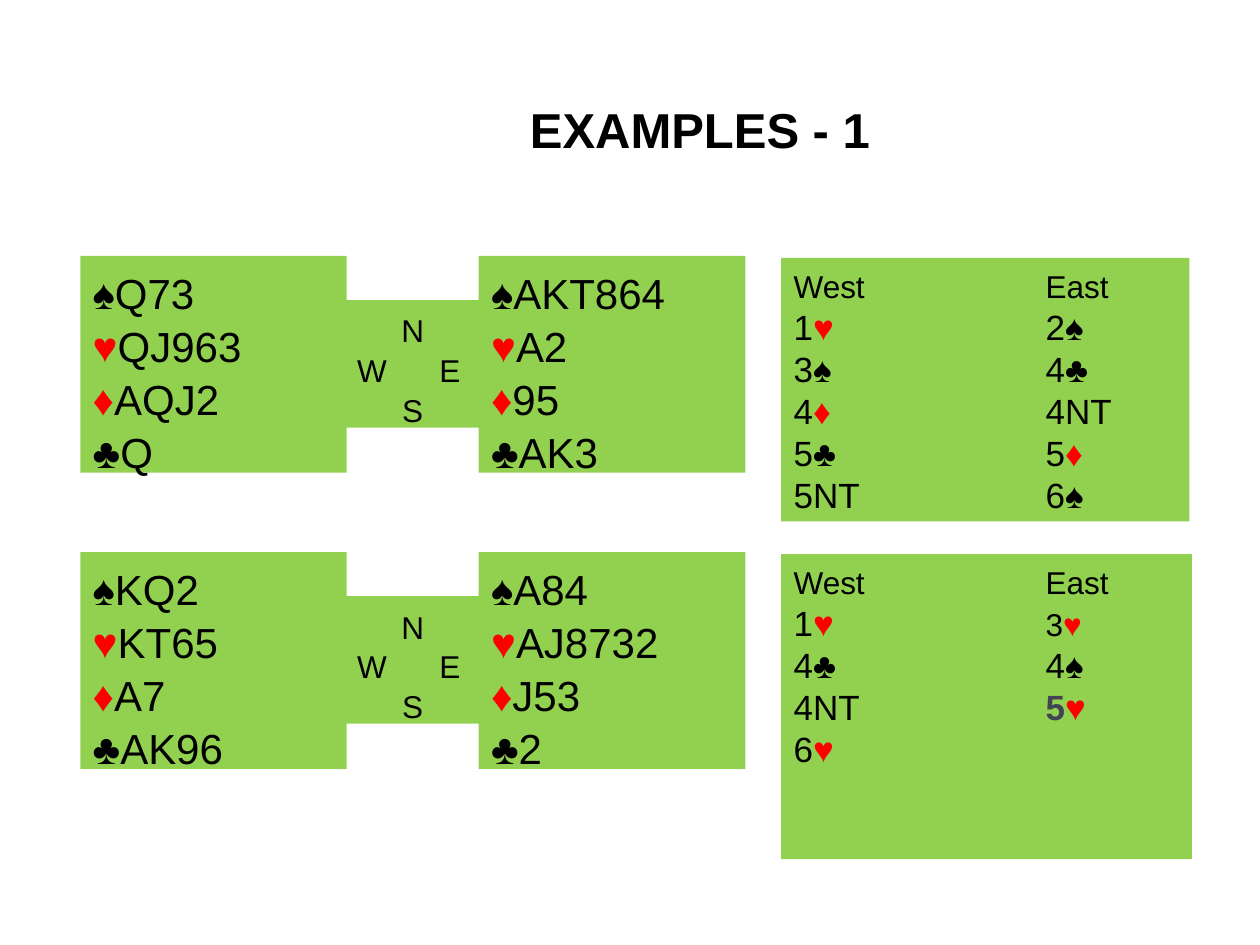
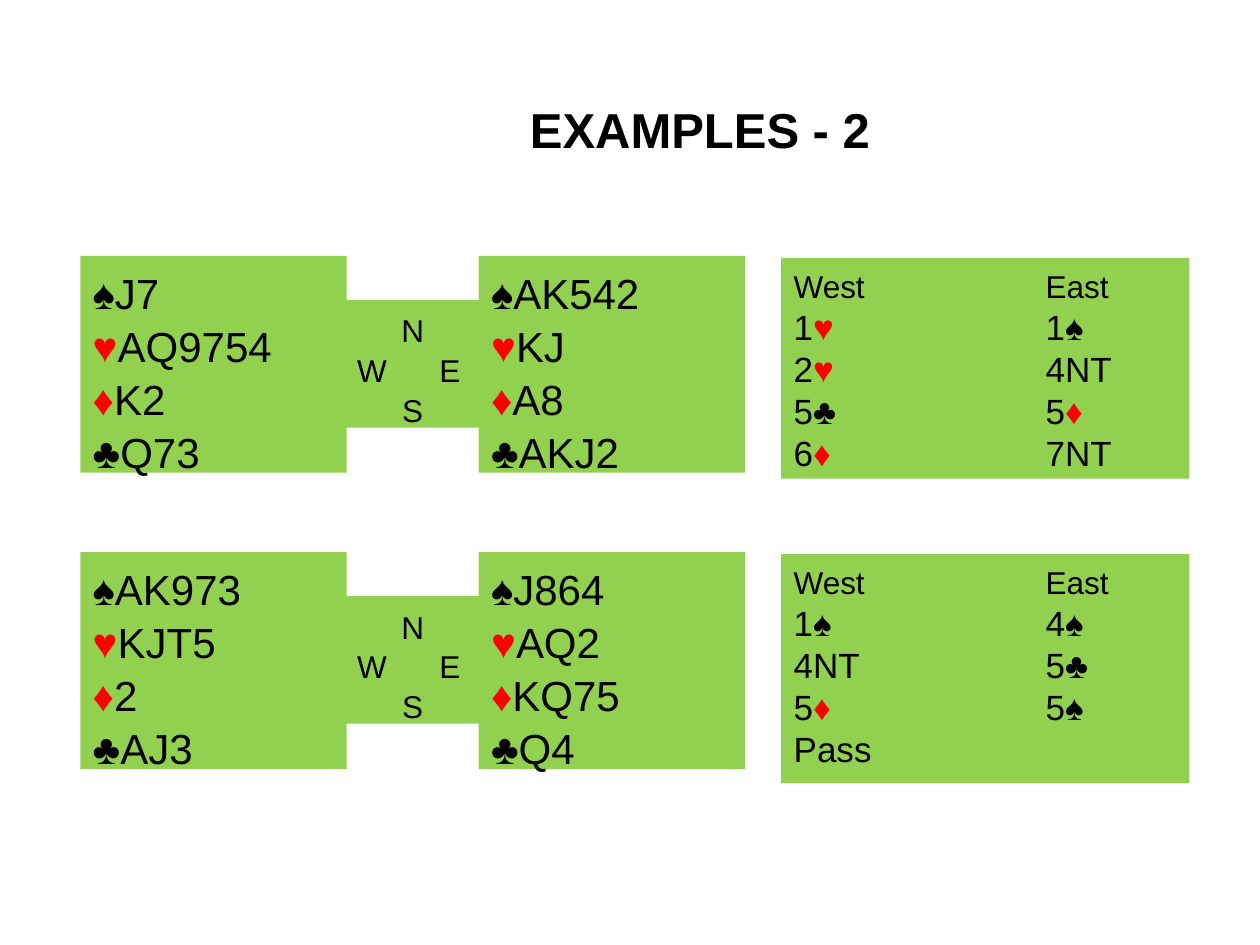
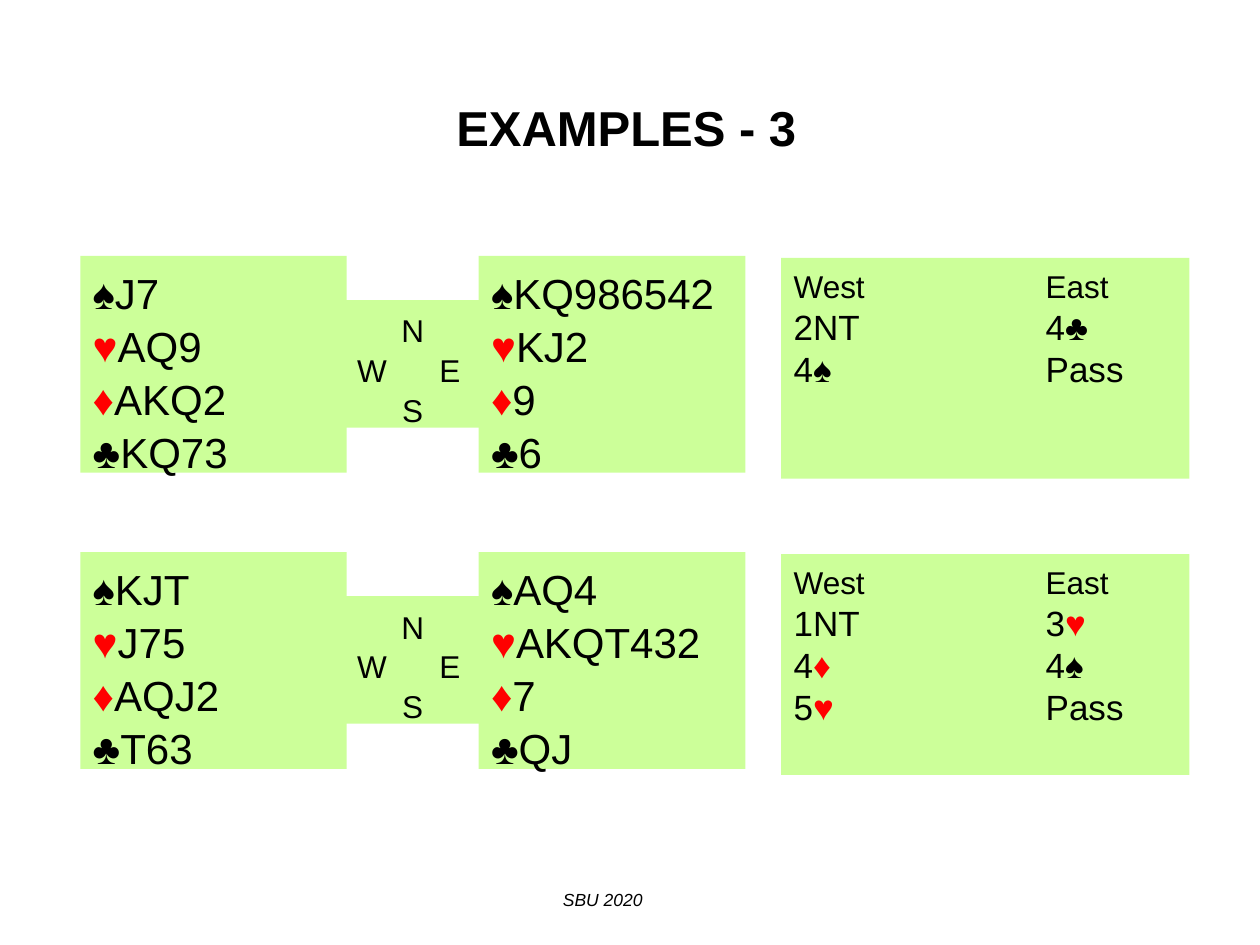
"""Build three slides of bridge hands with their auctions."""
from dataclasses import dataclass
from itertools import groupby, zip_longest

from lxml.etree import SubElement
from pptx import Presentation
from pptx.dml.color import RGBColor
from pptx.enum.shapes import MSO_SHAPE
from pptx.enum.text import MSO_ANCHOR, PP_ALIGN
from pptx.oxml.ns import qn
from pptx.util import Cm, Pt

BLACK = RGBColor(0x00, 0x00, 0x00)
RED = RGBColor(0xFF, 0x00, 0x00)
SLATE = RGBColor(0x42, 0x44, 0x56)
GREEN = RGBColor(0x92, 0xD0, 0x50)
PALE_GREEN = RGBColor(0xCC, 0xFF, 0x99)
FONT = "Arial"
SUITS = "♠♥♦♣"
RED_SUITS = "♥♦"
DEAL_TOPS = (5.16, 11.13)
EAST_BID_TAB = Cm(5.08)
EAST_SEAT_TAB = Cm(1.66)


@dataclass(frozen=True)
class Box:
    """Place and size in centimetres."""
    left: float
    top: float
    width: float
    height: float

    def lengths(self) -> tuple:
        """Return the four values as lengths."""
        return Cm(self.left), Cm(self.top), Cm(self.width), Cm(self.height)


@dataclass(frozen=True)
class Deal:
    """Two hands, in suit order, and the bids made with them."""
    west_hand: str
    east_hand: str
    west_bids: str
    east_bids: str
    auction_height: float = 4.45
    auction_width: float = 8.23
    small_bid: str = ""
    stressed_bid: str = ""


@dataclass(frozen=True)
class Example:
    """One slide with two deals."""
    title: str
    deals: tuple[Deal, Deal]
    felt: RGBColor = GREEN
    title_box: Box = Box(3.38, 1.14, 21.46, 2.9)
    credit: str = ""


EXAMPLES = (
    Example("EXAMPLES - 1", (
        Deal("Q73 QJ963 AQJ2 Q", "AKT864 A2 95 AK3",
             "1♥ 3♠ 4♦ 5♣ 5NT", "2♠ 4♣ 4NT 5♦ 6♠", 5.31),
        Deal("KQ2 KT65 A7 AK96", "A84 AJ8732 J53 2",
             "1♥ 4♣ 4NT 6♥", "3♥ 4♠ 5♥", 6.15, 8.28, "3♥", "5♥"),
    )),
    Example("EXAMPLES - 2", (
        Deal("J7 AQ9754 K2 Q73", "AK542 KJ A8 AKJ2",
             "1♥ 2♥ 5♣ 6♦", "1♠ 4NT 5♦ 7NT"),
        Deal("AK973 KJT5 2 AJ3", "J864 AQ2 KQ75 Q4",
             "1♠ 4NT 5♦ Pass", "4♠ 5♣ 5♠", 4.62),
    )),
    Example("EXAMPLES - 3", (
        Deal("J7 AQ9 AKQ2 KQ73", "KQ986542 KJ2 9 6",
             "2NT 4♠", "4♣ Pass"),
        Deal("KJT J75 AQJ2 T63", "AQ4 AKQT432 7 QJ",
             "1NT 4♦ 5♥", "3♥ 4♠ Pass"),
    ), PALE_GREEN, Box(3.38, 1.09, 18.49, 2.92), "SBU 2020"),
)


def add_runs(paragraph, text: str, size: float, ink: RGBColor = BLACK,
             bold: bool = False) -> None:
    """Append text, with hearts and diamonds in red."""
    for is_red, letters in groupby(text, lambda letter: letter in RED_SUITS):
        run = paragraph.add_run()
        run.text = "".join(letters)
        run.font.name = FONT
        run.font.size = Pt(size)
        run.font.color.rgb = RED if is_red else ink
        run.font.bold = bold and not is_red


def add_tab_stop(paragraph, position: int) -> None:
    """Give a paragraph one left tab stop."""
    tabs = SubElement(paragraph._p.get_or_add_pPr(), qn("a:tabLst"))
    SubElement(tabs, qn("a:tab"), pos=str(int(position)), algn="l")


def add_felt(shapes, box: Box, felt: RGBColor):
    """Draw a flat green rectangle and return its text frame."""
    panel = shapes.add_shape(MSO_SHAPE.RECTANGLE, *box.lengths())
    panel.shadow.inherit = False
    panel.fill.solid()
    panel.fill.fore_color.rgb = felt
    panel.line.fill.background()
    frame = panel.text_frame
    frame.word_wrap = True
    frame.vertical_anchor = MSO_ANCHOR.TOP
    frame.margin_top = Cm(0.19)
    return frame


def add_paragraphs(frame, count: int, spacing: float) -> list:
    """Return left-aligned empty paragraphs of a frame."""
    for _ in range(count - 1):
        frame.add_paragraph()
    for paragraph in frame.paragraphs:
        paragraph.alignment = PP_ALIGN.LEFT
        paragraph.line_spacing = spacing
    return list(frame.paragraphs)


def add_hand(shapes, box: Box, hand: str, felt: RGBColor) -> None:
    """Draw the four suits held by one player."""
    lines = add_paragraphs(add_felt(shapes, box, felt), len(SUITS), 1.05)
    for line, suit, cards in zip(lines, SUITS, hand.split()):
        add_runs(line, suit + cards, 24)


def add_compass(shapes, box: Box, felt: RGBColor) -> None:
    """Draw the four seats between the hands."""
    north, middle, south = add_paragraphs(add_felt(shapes, box, felt), 3, 1.05)
    add_tab_stop(middle, EAST_SEAT_TAB)
    for line, seats in ((north, "N"), (middle, "W\tE"), (south, "S")):
        add_runs(line, seats, 18)
    north.alignment = south.alignment = PP_ALIGN.CENTER


def add_auction(shapes, top: float, deal: Deal, felt: RGBColor) -> None:
    """Draw the bids of both players in two columns."""
    rounds = list(zip_longest(deal.west_bids.split(), deal.east_bids.split()))
    box = Box(15.75, top, deal.auction_width, deal.auction_height)
    header, *lines = add_paragraphs(add_felt(shapes, box, felt), len(rounds) + 1, 1.0)
    add_tab_stop(header, EAST_BID_TAB)
    add_runs(header, "West\tEast", 18)
    for line, (west, east) in zip(lines, rounds):
        add_tab_stop(line, EAST_BID_TAB)
        add_runs(line, west, 20)
        if east:
            stressed = east == deal.stressed_bid
            add_runs(line, "\t" + east, 18 if east == deal.small_bid else 20,
                     SLATE if stressed else BLACK, stressed)


def add_deal(slide, top: float, deal: Deal, felt: RGBColor) -> None:
    """Draw one deal and its auction."""
    add_auction(slide.shapes, top + 0.04, deal, felt)
    table = slide.shapes.add_group_shape().shapes
    add_hand(table, Box(1.62, top, 5.37, 4.37), deal.west_hand, felt)
    add_compass(table, Box(6.95, top + 0.89, 2.74, 2.57), felt)
    add_hand(table, Box(9.65, top, 5.38, 4.37), deal.east_hand, felt)


def set_title(slide, text: str, box: Box) -> None:
    """Move, fill and format the title placeholder."""
    title = slide.shapes.title
    title.left, title.top, title.width, title.height = box.lengths()
    frame = title.text_frame
    frame.text = text
    frame.vertical_anchor = MSO_ANCHOR.MIDDLE
    heading = frame.paragraphs[0]
    heading.alignment = PP_ALIGN.CENTER
    font = heading.runs[0].font
    font.name, font.size, font.bold = FONT, Pt(28), True
    font.color.rgb = BLACK


def add_credit(slide, text: str) -> None:
    """Write the small italic line at the foot."""
    frame = slide.shapes.add_textbox(*Box(11.1, 17.78, 8.23, 0.69).lengths()).text_frame
    frame.word_wrap = True
    frame.vertical_anchor = MSO_ANCHOR.MIDDLE
    add_runs(frame.paragraphs[0], text, 10)
    frame.paragraphs[0].runs[0].font.italic = True


def main() -> None:
    """Build and save the slides."""
    deck = Presentation()
    deck.slide_width, deck.slide_height = Cm(25.4), Cm(19.05)
    for example in EXAMPLES:
        slide = deck.slides.add_slide(deck.slide_layouts.get_by_name("Title Only"))
        set_title(slide, example.title, example.title_box)
        for top, deal in zip(DEAL_TOPS, example.deals):
            add_deal(slide, top, deal, example.felt)
        if example.credit:
            add_credit(slide, example.credit)
    deck.save("out.pptx")


if __name__ == "__main__":
    main()
